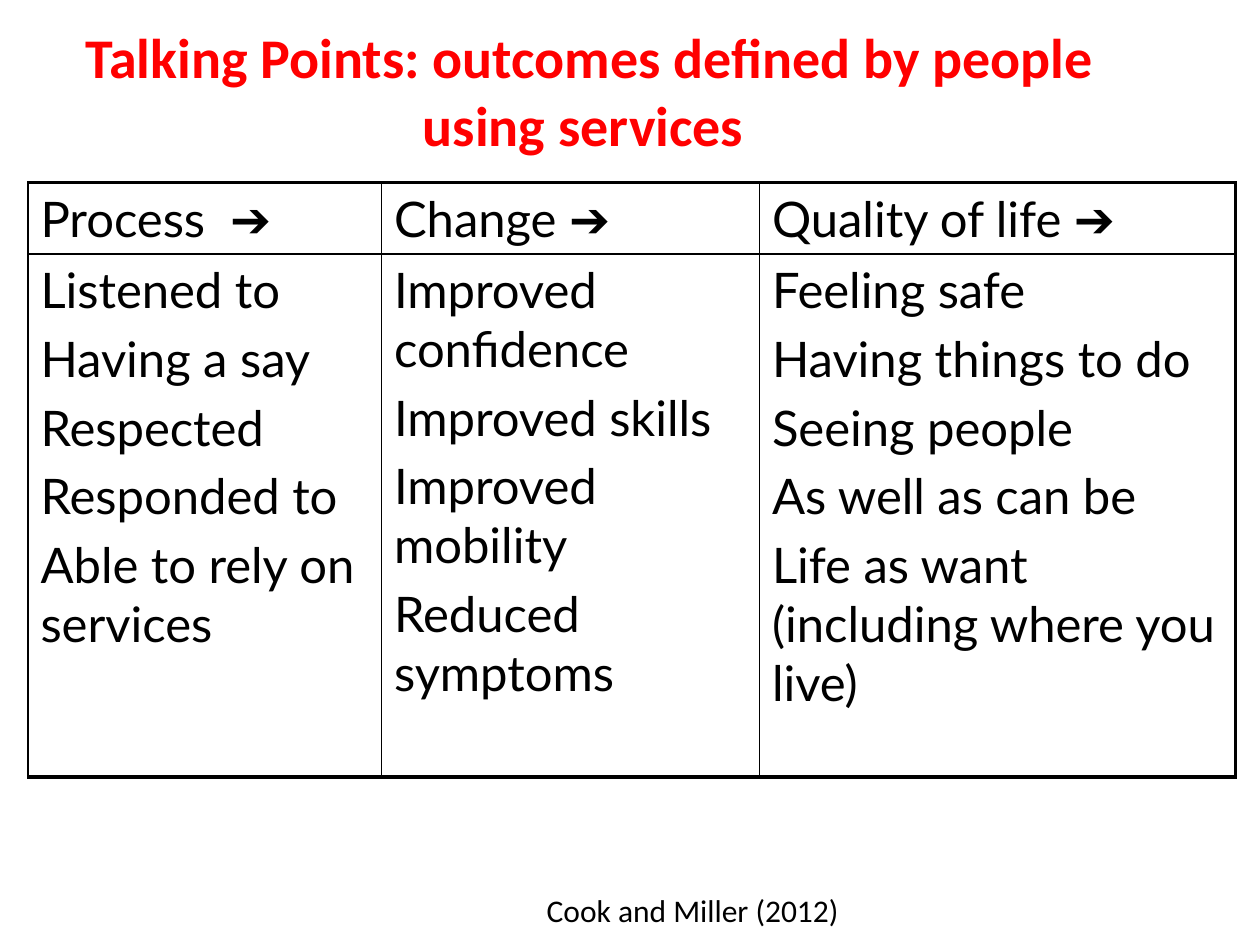
from pptx import Presentation
from pptx.dml.color import RGBColor
from pptx.enum.text import MSO_ANCHOR, MSO_AUTO_SIZE, PP_ALIGN
from pptx.oxml import parse_xml
from pptx.oxml.ns import nsdecls
from pptx.util import Pt


def style(r, font, size, color="000000", bold=False):
    r.font.name = font
    r.font.size = Pt(size)
    r.font.bold = bold
    r.font.color.rgb = RGBColor.from_string(color)


def border(cell, side, width):
    cell._tc.get_or_add_tcPr().append(parse_xml(
        f'<a:{side} {nsdecls("a")} w="{Pt(width)}"><a:solidFill>'
        f'<a:srgbClr val="000000"/></a:solidFill></a:{side}>'))


prs = Presentation()
prs.slide_width, prs.slide_height = Pt(720), Pt(540)
s = prs.slides.add_slide(prs.slide_layouts[5])

# Title
sp = s.shapes.title
sp.left, sp.top, sp.width, sp.height = Pt(36), Pt(25.2), Pt(602), Pt(52.6)
tf = sp.text_frame
tf.text = "Talking Points: outcomes defined by people using services "
tf.word_wrap = True
tf.auto_size = MSO_AUTO_SIZE.NONE
tf.vertical_anchor = MSO_ANCHOR.MIDDLE
p = tf.paragraphs[0]
p.alignment = PP_ALIGN.CENTER
style(p.runs[0], "Calibri", 32, "FF0000", True)

# Outcomes table: heading, then outcomes, for each column
columns = [
    ("Process  ", 202, ["Listened to", "Having a say", "Respected",
                        "Responded to", "Able to rely on services"]),
    ("Change ", 216, ["Improved confidence", "Improved skills",
                      "Improved mobility", "Reduced symptoms"]),
    ("Quality of life ", 272, ["Feeling safe", "Having things to do",
                               "Seeing people", "As well as can be",
                               "Life as want (including where you live)"]),
]
heights = [40.5, 298.8]
tbl = s.shapes.add_table(2, 3, Pt(16), Pt(104.4), Pt(690), Pt(sum(heights))).table
tbl.first_row = tbl.horz_banding = False
for row, height in zip(tbl.rows, heights):
    row.height = Pt(height)

for j, (heading, width, outcomes) in enumerate(columns):
    tbl.columns[j].width = Pt(width)
    for i, lines in enumerate([[heading], outcomes]):
        cell = tbl.cell(i, j)
        cell.text_frame.text = "\n".join(lines)
        for p in cell.text_frame.paragraphs:
            p.space_before = Pt(5.6)
            style(p.runs[0], "Lato", 28)
        if i == 0:
            r = p.add_run()
            r.text = "➔"
            style(r, "Arial", 28)
        # Heavier lines on the top, right and bottom outer edges
        border(cell, "lnL", 1)
        border(cell, "lnR", 2.25 if j == 2 else 1)
        border(cell, "lnT", 2.25 if i == 0 else 1)
        border(cell, "lnB", 2.25 if i == 1 else 1)
        cell.fill.background()

# Source credit
tf = s.shapes.add_textbox(Pt(305.3), Pt(505.4), Pt(360.7), Pt(28.8)).text_frame
tf.word_wrap = True
tf.text = "Cook and Miller (2012)"
style(tf.paragraphs[0].runs[0], "Calibri", 18)

prs.save("out.pptx")
